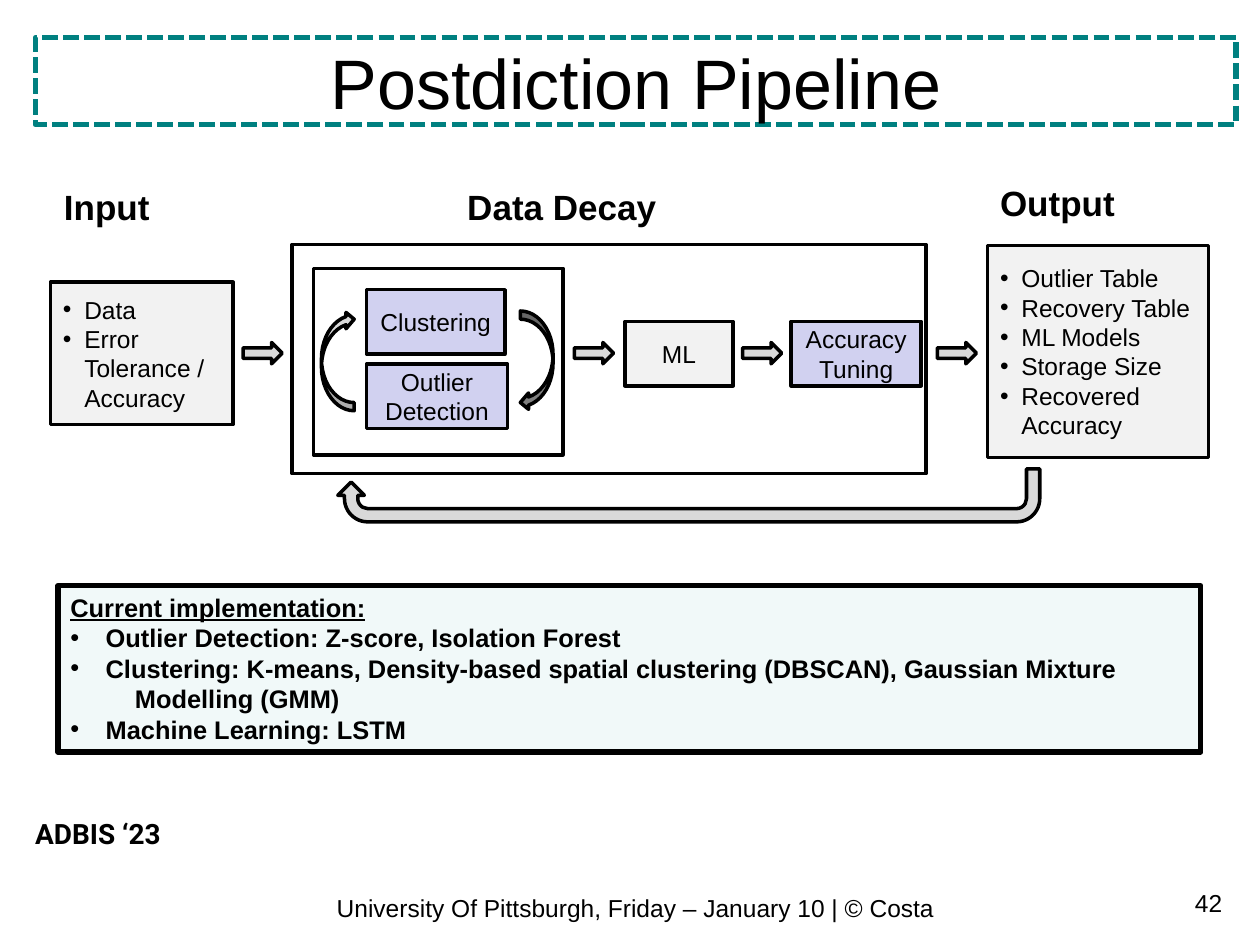
"""Build the Postdiction Pipeline slide."""
from lxml import etree
from pptx import Presentation
from pptx.dml.color import RGBColor
from pptx.enum.dml import MSO_LINE
from pptx.enum.shapes import MSO_SHAPE
from pptx.enum.text import MSO_ANCHOR, PP_ALIGN
from pptx.oxml.ns import qn
from pptx.util import Cm, Pt

LEFT, CENTER, RIGHT = PP_ALIGN.LEFT, PP_ALIGN.CENTER, PP_ALIGN.RIGHT
TOP, MIDDLE = MSO_ANCHOR.TOP, MSO_ANCHOR.MIDDLE
RECT = MSO_SHAPE.RECTANGLE
RIGHT_ARROW = MSO_SHAPE.RIGHT_ARROW
CURVED_ARROW = MSO_SHAPE.CURVED_LEFT_ARROW
UTURN_ARROW = MSO_SHAPE.U_TURN_ARROW
SYS_DASH = MSO_LINE.SQUARE_DOT

BLACK, TEAL, MINT = "000000", "008080", "F1F9F9"
LAVENDER, PALE, SILVER, GRAY = "D1D1F0", "F2F2F2", "D9D9D9", "808080"

TITLE = ("Postdiction Pipeline", (0.71, 0.76, 24.21, 1.75))
INPUT = (["Data", "Error Tolerance / Accuracy"], (1.02, 5.69, 3.68, 2.87))
OUTPUT = (["Outlier Table", "Recovery Table", "ML Models", "Storage Size",
           "Recovered Accuracy"], (19.91, 4.95, 4.45, 4.27))
DECAY_FRAME = (5.89, 4.93, 12.78, 4.62)
LOOP_FRAME = (6.32, 5.41, 5.03, 3.76)
ML = ("ML", PALE, (12.6, 6.48, 2.18, 1.3))
TUNING = ("Accuracy Tuning", LAVENDER, (15.95, 6.48, 2.62, 1.3))
STEPS = [
    ("Clustering", LAVENDER, (7.39, 5.84, 2.79, 1.3)),
    ("Outlier Detection", LAVENDER, (7.39, 7.34, 2.84, 1.3)),
    ML,
    TUNING,
]
TURNS = [
    (CURVED_ARROW, GRAY, 0, (10.49, 6.27, 0.66, 2.01)),
    (CURVED_ARROW, SILVER, 180, (6.48, 6.27, 0.66, 2.01)),
    (UTURN_ARROW, SILVER, 180, (6.81, 9.45, 14.15, 1.07)),
]
FLOW = [
    (INPUT[-1], DECAY_FRAME),
    (LOOP_FRAME, ML[-1]),
    (ML[-1], TUNING[-1]),
    ((DECAY_FRAME[0] + DECAY_FRAME[2], 0, 0, 0), OUTPUT[-1]),
]
FLOW_MIDDLE, ARROW_WIDTH, ARROW_HEIGHT = 7.12, 0.79, 0.43
NOTES = ([
    "Current implementation:",
    "Outlier Detection: Z-score, Isolation Forest",
    "Clustering: K-means, Density-based spatial clustering (DBSCAN), "
    "Gaussian Mixture\v\tModelling (GMM)",
    "Machine Learning: LSTM",
], (1.17, 11.81, 23.04, 3.35))
LABELS = [
    ("Input", 20, True, "Arial", LEFT, (1.04, 3.61, 3.73, 1.12)),
    ("Data Decay", 20, True, "Arial", LEFT, (9.17, 3.61, 8.97, 1.12)),
    ("Output", 20, True, "Arial", LEFT, (19.91, 3.53, 4.45, 1.12)),
    ("ADBIS ‘23", 16, True, "Roboto", LEFT, (0.46, 16.33, 5.64, 0.94)),
    ("University Of Pittsburgh, Friday – January 10 | © Costa", 14, False,
     "Arial", CENTER, (0.71, 17.88, 24.21, 0.86)),
    ("42", 14, False, "Arial", RIGHT, (21.89, 17.78, 3, 1.02)),
]


def color(value):
    return RGBColor.from_string(value)


def add_block(slide, kind, place, fill=None, line=BLACK, width=2):
    block = slide.shapes.add_shape(kind, *map(Cm, place))
    block.shadow.inherit = False
    if fill:
        block.fill.solid()
        block.fill.fore_color.rgb = color(fill)
    else:
        block.fill.background()
    block.line.color.rgb = color(line)
    block.line.width = Pt(width)
    return block


def write(shape, text, size=14, bold=False, font="Arial", align=CENTER, anchor=MIDDLE):
    frame = shape.text_frame
    frame.text = text
    frame.word_wrap = True
    frame.vertical_anchor = anchor
    for paragraph in frame.paragraphs:
        paragraph.alignment = align
        for run in paragraph.runs:
            run.font.size = Pt(size)
            run.font.bold = bold
            run.font.name = font
            run.font.color.rgb = color(BLACK)
    return frame.paragraphs


def add_bullets(paragraphs, indent, tab=None):
    for paragraph in paragraphs:
        properties = paragraph._p.get_or_add_pPr()
        properties.set("marL", str(Cm(indent)))
        properties.set("indent", str(-Cm(indent)))
        etree.SubElement(properties, qn("a:buFont"), typeface="Arial")
        etree.SubElement(properties, qn("a:buChar"), char="•")
        if tab:
            stops = etree.SubElement(properties, qn("a:tabLst"))
            etree.SubElement(stops, qn("a:tab"), pos=str(Cm(tab)), algn="l")


def main():
    deck = Presentation()
    deck.slide_width, deck.slide_height = Cm(25.4), Cm(19.05)
    slide = deck.slides.add_slide(deck.slide_layouts[6])

    title, place = TITLE
    banner = add_block(slide, RECT, place, line=TEAL, width=3)
    banner.line.dash_style = SYS_DASH
    write(banner, title, 40)

    for place in (DECAY_FRAME, LOOP_FRAME):
        add_block(slide, RECT, place)
    for step, fill, place in STEPS:
        write(add_block(slide, RECT, place, fill), step)
    for items, place in (INPUT, OUTPUT):
        box = add_block(slide, RECT, place, PALE)
        add_bullets(write(box, "\n".join(items), align=LEFT), 0.43)

    for kind, fill, rotation, place in TURNS:
        add_block(slide, kind, place, fill).rotation = rotation
    for before, after in FLOW:
        middle = (before[0] + before[2] + after[0]) / 2
        add_block(slide, RIGHT_ARROW,
                  (middle - ARROW_WIDTH / 2, FLOW_MIDDLE - ARROW_HEIGHT / 2,
                   ARROW_WIDTH, ARROW_HEIGHT), SILVER)

    lines, place = NOTES
    notes = add_block(slide, RECT, place, MINT, width=3)
    heading, *details = write(notes, "\n".join(lines), 14.5, True, align=LEFT, anchor=TOP)
    heading.runs[0].font.underline = True
    add_bullets(details, 0.71, tab=1.3)

    for text, size, bold, font, align, place in LABELS:
        label = slide.shapes.add_textbox(*map(Cm, place))
        write(label, text, size, bold, font, align, TOP)

    deck.save("out.pptx")


if __name__ == "__main__":
    main()
